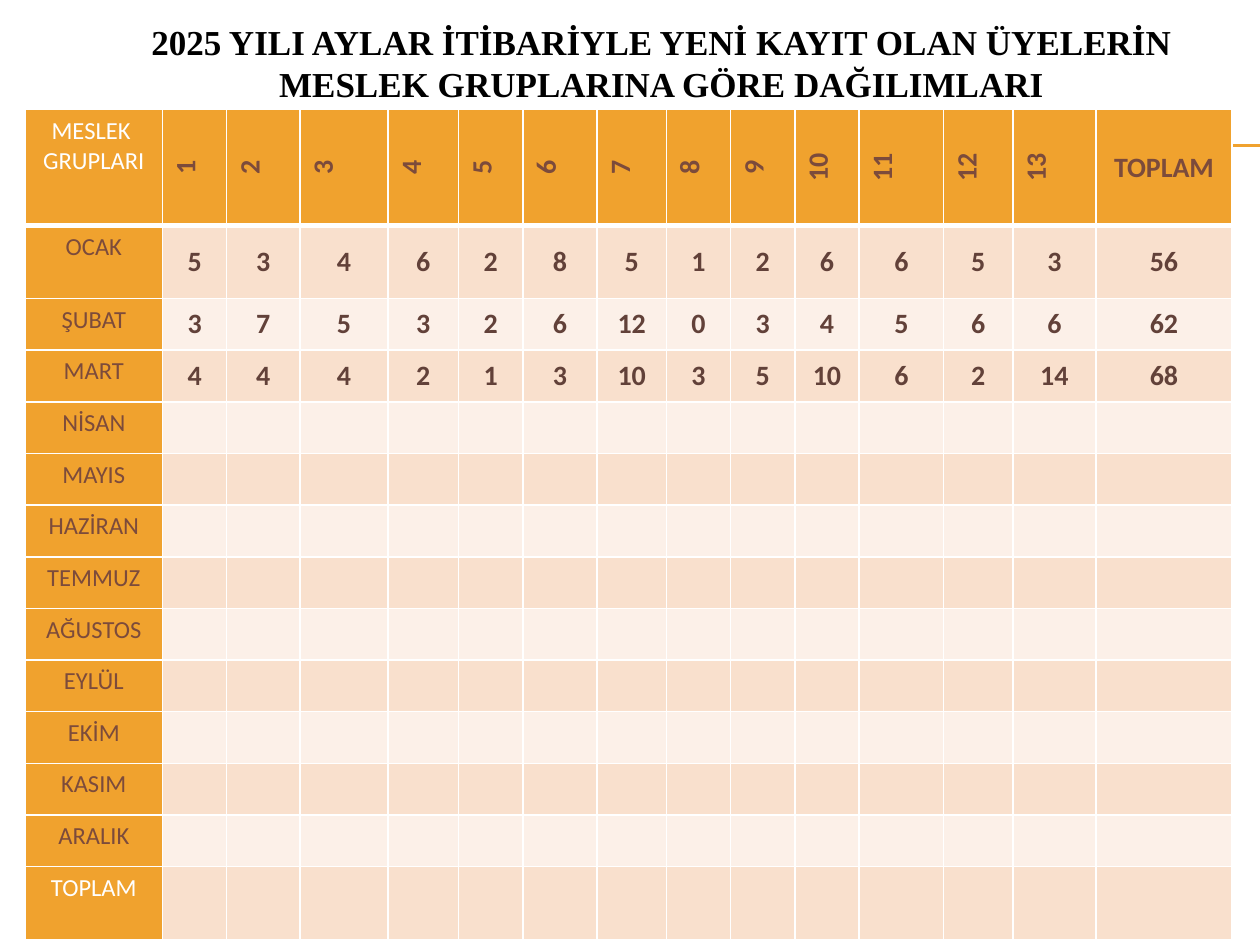
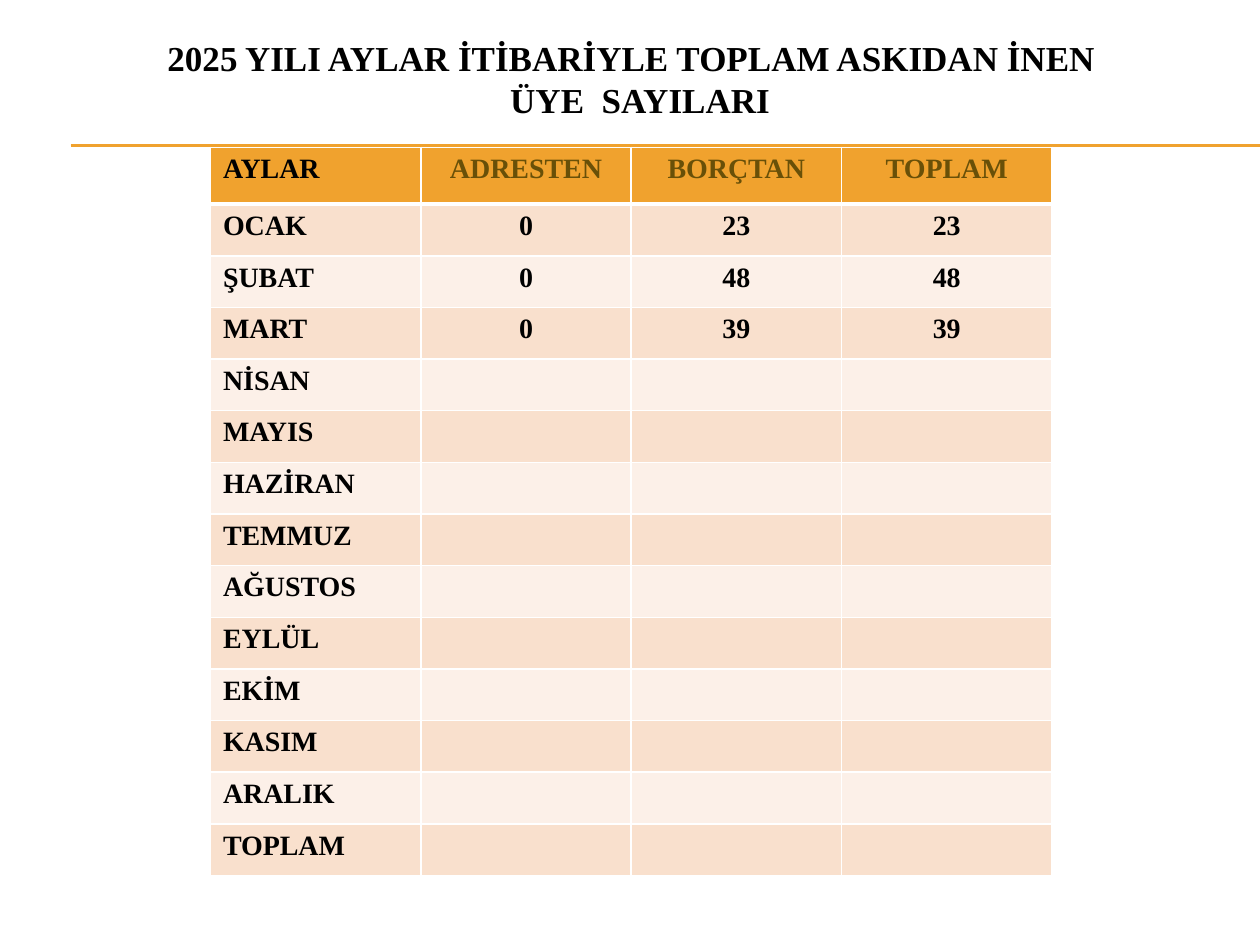
import pptx
import pptx.util
import pptx.dml.color
import pptx.enum.shapes
import pptx.enum.text
import pptx.oxml
import pptx.oxml.ns
from lxml import etree

Inches = pptx.util.Inches
Pt = pptx.util.Pt
RGBColor = pptx.dml.color.RGBColor
ALIGN = pptx.enum.text.PP_ALIGN
ANCHOR = pptx.enum.text.MSO_ANCHOR

ORANGE = RGBColor(0xF0, 0xA2, 0x2E)
PEACH = RGBColor(0xF9, 0xE0, 0xCD)
CREAM = RGBColor(0xFC, 0xF0, 0xE8)
WHITE = RGBColor(0xFF, 0xFF, 0xFF)
BLACK = RGBColor(0, 0, 0)
BROWN = RGBColor(0x7C, 0x4B, 0x3B)
DARK_BROWN = RGBColor(0x62, 0x41, 0x39)
OLIVE = RGBColor(0x69, 0x50, 0x08)
SERIF = "Times New Roman"
SANS = "Calibri"

TOTAL = "TOPLAM"
ROW_NAMES = ["OCAK", "ŞUBAT", "MART", "NİSAN", "MAYIS", "HAZİRAN", "TEMMUZ", "AĞUSTOS",
             "EYLÜL", "EKİM", "KASIM", "ARALIK", TOTAL]

GROUPS_TITLE = ["2025 YILI AYLAR İTİBARİYLE YENİ KAYIT OLAN ÜYELERİN MESLEK GRUPLARINA GÖRE DAĞILIMLARI"]
NEW_MEMBERS = [
    [5, 3, 4, 6, 2, 8, 5, 1, 2, 6, 6, 5, 3],
    [3, 7, 5, 3, 2, 6, 12, 0, 3, 4, 5, 6, 6],
    [4, 4, 4, 2, 1, 3, 10, 3, 5, 10, 6, 2, 14],
]
GROUPS_HEADER = ["MESLEK  GRUPLARI"] + [str(n) for n in range(1, 14)] + [TOTAL]
GROUPS_COLS = [1.09, 0.51, 0.58, 0.7, 0.56, 0.51, 0.59, 0.55, 0.51, 0.51, 0.51, 0.67, 0.55, 0.66, 1.08]
GROUPS_ROWS = [0.92, 0.58] + [0.41] * 11 + [0.58]

REMOVED_TITLE = ["2025 YILI AYLAR İTİBARİYLE TOPLAM ASKIDAN İNEN  ", "ÜYE  SAYILARI"]
REMOVED_HEADER = ["AYLAR", "ADRESTEN", "BORÇTAN", TOTAL]
REMOVED = [(0, 23), (0, 48), (0, 39)]
REMOVED_COLS = [1.67] * 4
REMOVED_ROWS = [0.45] + [0.41] * 13


def add_rules(layout, s):
    for i, y in enumerate((1.15, 1.16)):
        line = s.shapes.add_connector(pptx.enum.shapes.MSO_CONNECTOR.STRAIGHT,
                                      Inches(0.56), Inches(y), Inches(10), Inches(y))
        line.line.color.rgb = ORANGE
        line.line.width = Pt(0.75)
        etree.SubElement(line.element.spPr, pptx.oxml.ns.qn("a:effectLst"))
        line.element.xpath("./*/p:cNvPr")[0].set("id", str(100 + i))
        layout.shapes.element.append(line.element)


def style_run(r, size, font, color, bold):
    r.font.size = Pt(size)
    r.font.name = font
    r.font.color.rgb = color
    r.font.bold = bold


def set_title(s, lines, left, top, width, height):
    sp = s.shapes.title
    sp.left, sp.top, sp.width, sp.height = (Inches(v) for v in (left, top, width, height))
    tf = sp.text_frame
    tf.word_wrap = True
    tf.auto_size = pptx.enum.text.MSO_AUTO_SIZE.NONE
    tf.vertical_anchor = ANCHOR.MIDDLE
    p = tf.paragraphs[0]
    p.alignment = ALIGN.CENTER
    for i, text in enumerate(lines):
        if i:
            p.add_line_break()
        r = p.add_run()
        r.text = text
        style_run(r, 20, SERIF, BLACK, True)


def set_borders(cell, row):
    widths = {"L": 1, "R": 1, "T": 3 if row == 1 else 1, "B": 3 if row == 0 else 1}
    tcPr = cell._tc.get_or_add_tcPr()
    for i, (side, width) in enumerate(widths.items()):
        tcPr.insert(i, pptx.oxml.parse_xml(
            f'<a:ln{side} {pptx.oxml.ns.nsdecls("a")} w="{Pt(width)}"><a:solidFill>'
            f'<a:srgbClr val="{WHITE}"/></a:solidFill></a:ln{side}>'))


def add_grid(s, left, top, cols, rows, header, values, fill_for, style_for):
    table = s.shapes.add_table(len(rows), len(cols), Inches(left), Inches(top),
                               Inches(sum(cols)), Inches(sum(rows))).table
    for column, width in zip(table.columns, cols):
        column.width = Inches(width)
    for row, height in zip(table.rows, rows):
        row.height = Inches(height)
    texts = [header]
    for i, name in enumerate(ROW_NAMES):
        numbers = [*values[i], sum(values[i])] if i < len(values) else [""] * (len(cols) - 1)
        texts.append([name, *numbers])
    for i, line in enumerate(texts):
        for j, text in enumerate(line):
            cell = table.cell(i, j)
            cell.fill.solid()
            cell.fill.fore_color.rgb = fill_for(i, j)
            set_borders(cell, i)
            if text == "":
                continue
            align, anchor, font_style = style_for(i, j)
            p = cell.text_frame.paragraphs[0]
            p.alignment = align
            cell.vertical_anchor = anchor
            r = p.add_run()
            r.text = str(text)
            style_run(r, *font_style)
    return table


def band(i):
    return ORANGE if i == 0 else PEACH if i % 2 else CREAM


def groups_fill(i, j):
    return ORANGE if j == 0 else band(i)


def groups_style(i, j):
    if j == 0:
        color = WHITE if i in (0, len(ROW_NAMES)) else BROWN
        return ALIGN.CENTER, ANCHOR.TOP, (14, SANS, color, False)
    if i == 0:
        anchor = ANCHOR.MIDDLE if j == len(GROUPS_COLS) - 1 else ANCHOR.TOP
        return ALIGN.CENTER, anchor, (16, SANS, BROWN, True)
    return ALIGN.CENTER, ANCHOR.MIDDLE, (16, SANS, DARK_BROWN, True)


def removed_fill(i, j):
    return band(i)


def removed_style(i, j):
    color = OLIVE if i == 0 and j else BLACK
    return ALIGN.CENTER if j else ALIGN.LEFT, ANCHOR.TOP, (16, SERIF, color, True)


def main():
    prs = pptx.Presentation()
    prs.slide_width, prs.slide_height = Inches(10), Inches(7.5)
    layout = prs.slide_layouts[5]

    s = prs.slides.add_slide(layout)
    add_rules(layout, s)
    set_title(s, GROUPS_TITLE, 0.5, 0, 9.5, 0.99)
    table = add_grid(s, 0.2, 0.87, GROUPS_COLS, GROUPS_ROWS, GROUPS_HEADER, NEW_MEMBERS,
                     groups_fill, groups_style)
    for j in range(1, len(GROUPS_COLS) - 1):
        table.cell(0, j)._tc.get_or_add_tcPr().set("vert", "vert270")

    s = prs.slides.add_slide(layout)
    set_title(s, REMOVED_TITLE, 0.33, 0.16, 9.5, 0.92)
    add_grid(s, 1.67, 1.17, REMOVED_COLS, REMOVED_ROWS, REMOVED_HEADER, REMOVED,
             removed_fill, removed_style)

    prs.save("out.pptx")


if __name__ == "__main__":
    main()
